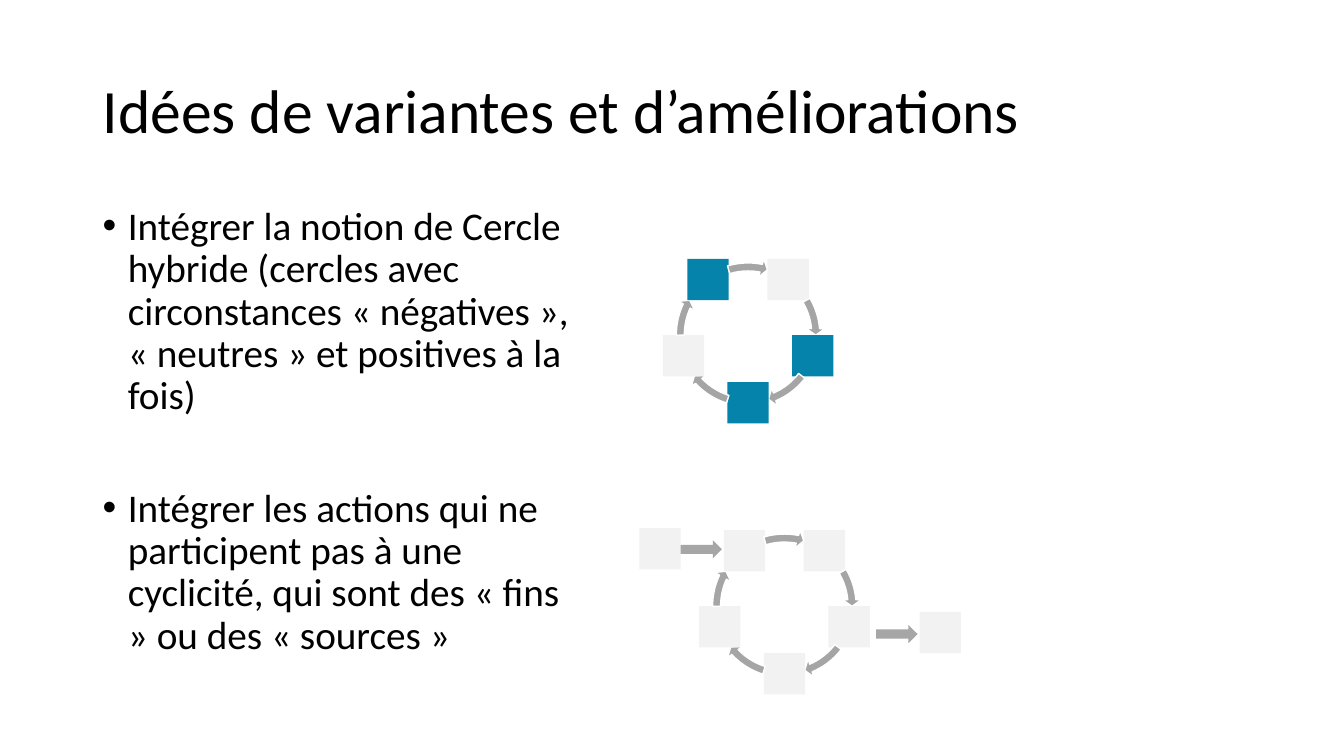
from math import cos, radians, sin

from lxml.etree import SubElement
from pptx import Presentation
from pptx.dml.color import RGBColor
from pptx.enum.shapes import MSO_SHAPE
from pptx.enum.text import MSO_ANCHOR
from pptx.oxml.ns import qn
from pptx.util import Inches, Pt

COLORS = {"text": "000000", "neutral": "F2F2F2", "marked": "0683AA",
          "cycle": "A5A5A5", "arrow": "A6A6A6", "outline": "FFFFFF"}
SQUARE = 0.41
RADIUS = 0.675
RING = 1.53
ARCS = [(212.929, 197.665), (40.144, 22.537), (82.103, 64.496),
        (122.975, 107.711), (168.654, 151.986)]
IDEAS = [
    "Intégrer la notion de Cercle hybride (cercles avec circonstances "
    "« négatives », « neutres » et positives à la fois)",
    "Intégrer les actions qui ne participent pas à une cyclicité, "
    "qui sont des « fins » ou des « sources »",
]


def rgb(name):
    """Return the named colour."""
    return RGBColor.from_string(COLORS[name])


def add_bullet(p):
    """Give a paragraph a hanging bullet."""
    pPr = p._p.get_or_add_pPr()
    pPr.set("marL", str(Inches(0.25)))
    pPr.set("indent", str(-Inches(0.25)))
    SubElement(pPr, qn("a:buFont")).set("typeface", "Arial")
    SubElement(pPr, qn("a:buChar")).set("char", "•")


def add_text(s, paragraphs, box, size=28, anchor=MSO_ANCHOR.TOP, bullet=False, gap=0):
    """Add a text box with one paragraph per string."""
    tf = s.shapes.add_textbox(*map(Inches, box)).text_frame
    tf.word_wrap = True
    tf.vertical_anchor = anchor
    for i, text in enumerate(paragraphs):
        p = tf.add_paragraph() if i else tf.paragraphs[0]
        p.line_spacing = 0.9
        p.space_before = Pt(gap if i else 0)
        if bullet:
            add_bullet(p)
        r = p.add_run()
        r.text = text
        r.font.size = Pt(size)
        r.font.name = "Calibri"
        r.font.color.rgb = rgb("text")


def add_figure(s, kind, box, fill, outline=None):
    """Add a flat preset shape."""
    sp = s.shapes.add_shape(kind, *map(Inches, box))
    sp.shadow.inherit = False
    sp.fill.solid()
    sp.fill.fore_color.rgb = rgb(fill)
    if outline:
        sp.line.color.rgb = rgb(outline)
        sp.line.width = Pt(1)
    else:
        sp.line.fill.background()
    return sp


def add_square(s, left, top, fill="neutral"):
    """Add one circumstance square."""
    add_figure(s, MSO_SHAPE.RECTANGLE, (left, top, SQUARE, SQUARE), fill)


def add_arrow(s, left, top):
    """Add a straight arrow pointing right."""
    add_figure(s, MSO_SHAPE.RIGHT_ARROW, (left, top, SQUARE, 0.18), "arrow")


def add_cycle(s, cx, cy, marked=()):
    """Add five squares around a centre, linked by curved arrows."""
    ring = (cx - RING / 2, cy - RING / 2, RING, RING)
    for i, (end, start) in enumerate(ARCS):
        angle = radians(72 * i - 54)
        add_square(s, cx + RADIUS * cos(angle) - SQUARE / 2,
                   cy + RADIUS * sin(angle) - SQUARE / 2,
                   "marked" if i in marked else "neutral")
        arc = add_figure(s, MSO_SHAPE.CIRCULAR_ARROW, ring, "cycle", "outline")
        for k, value in enumerate((0.052, 3.36, end, start, 0.061)):
            arc.adjustments[k] = value


def main():
    """Build and save the slide."""
    prs = Presentation()
    prs.slide_width, prs.slide_height = Inches(13.33), Inches(7.5)
    s = prs.slides.add_slide(prs.slide_layouts[6])
    add_text(s, ["Idées de variantes et d’améliorations"], (0.92, 0.4, 11.5, 1.45),
             size=44, anchor=MSO_ANCHOR.MIDDLE)
    add_text(s, IDEAS, (0.92, 2, 4.83, 4.76), bullet=True, gap=50)
    add_cycle(s, 7.78, 6.01)
    add_square(s, 6.34, 5.24)
    add_arrow(s, 6.75, 5.36)
    add_arrow(s, 8.69, 6.2)
    add_square(s, 9.12, 6.07)
    add_cycle(s, 7.42, 3.32, marked=(1, 2, 4))
    prs.save("out.pptx")


if __name__ == "__main__":
    main()
